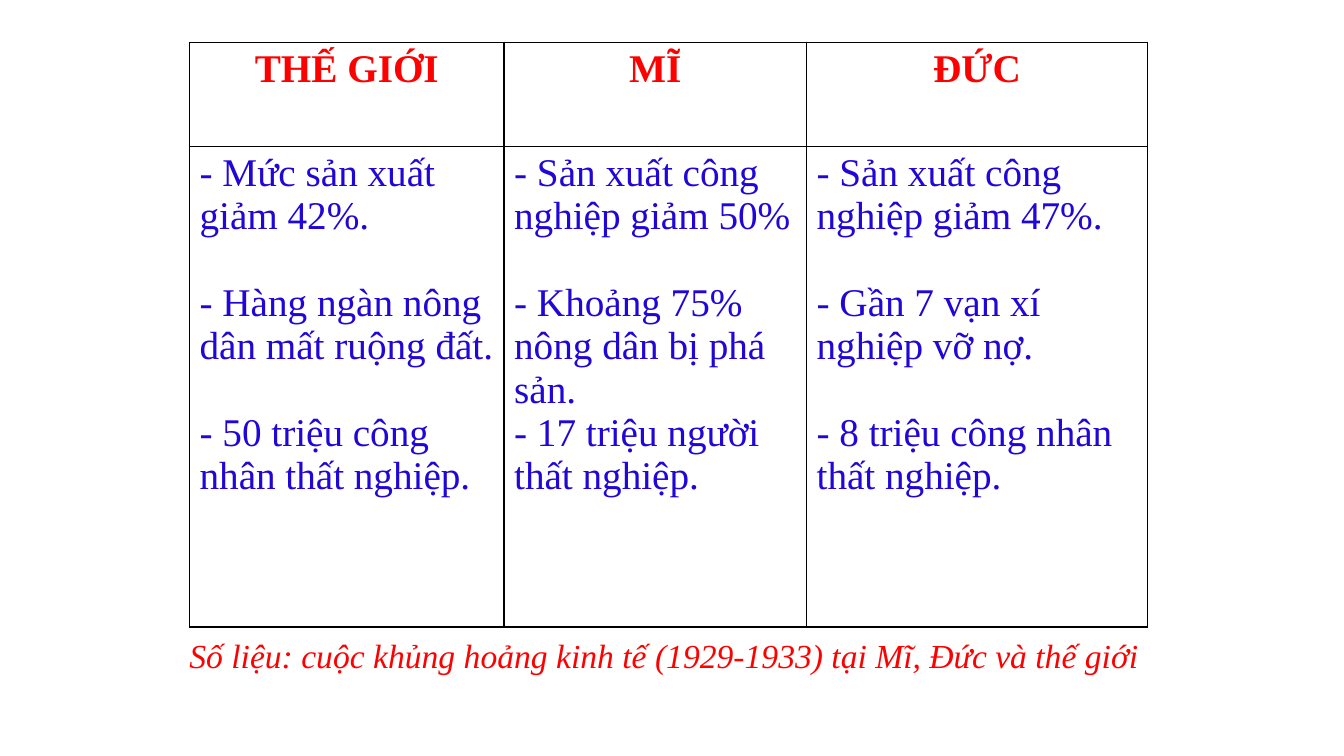
from lxml import etree
from pptx import Presentation
from pptx.dml.color import RGBColor
from pptx.enum import text as t
from pptx.oxml import ns
from pptx.util import Inches, Pt

RED, BLUE, BLACK, WHITE = "FF0000", "2007D7", "000000", "FFFFFF"
GAP = 31
HEADER = {"size": Pt(28), "name": "Times New Roman", "bold": True}
BODY = {**HEADER, "bold": False}
CAPTION = {**BODY, "size": Pt(24), "italic": True}

COLUMNS = [
    ("THẾ GIỚI", 3.12, [
        ("- Mức sản xuất giảm 42%.", 0),
        ("- Hàng ngàn nông dân mất ruộng đất.", GAP),
        ("- 50 triệu công nhân thất nghiệp.", GAP)]),
    ("MĨ", 3, [
        ("- Sản xuất công nghiệp giảm 50%", 0),
        ("- Khoảng 75% nông dân bị phá sản.", GAP),
        ("- 17 triệu người thất nghiệp.", 0)]),
    ("ĐỨC", 3.38, [
        ("- Sản xuất công nghiệp giảm 47%.", 0),
        ("- Gần 7 vạn xí nghiệp vỡ nợ.", GAP),
        ("- 8 triệu công nhân thất nghiệp.", GAP)]),
]
ROW_HEIGHTS = [1.03, 4.77]


def rgb(colour):
    return RGBColor.from_string(colour)


def write(frame, lines, colour, font_format, align=t.PP_ALIGN.LEFT):
    for index, (words, gap) in enumerate(lines):
        paragraph = frame.add_paragraph() if index else frame.paragraphs[0]
        paragraph.alignment = align
        paragraph.space_before = Pt(gap)
        run = paragraph.add_run()
        run.text = words
        for key, value in font_format.items():
            setattr(run.font, key, value)
        run.font.color.rgb = rgb(colour)


def add_borders(cell):
    properties = cell._tc.get_or_add_tcPr()
    for position, side in enumerate(("lnL", "lnR", "lnT", "lnB")):
        line = etree.Element(ns.qn(f"a:{side}"), w=str(Pt(1)))
        fill = etree.SubElement(line, ns.qn("a:solidFill"))
        etree.SubElement(fill, ns.qn("a:srgbClr"), val=BLACK)
        properties.insert(position, line)


def style_cell(cell):
    cell.fill.solid()
    cell.fill.fore_color.rgb = rgb(WHITE)
    add_borders(cell)


def add_figures_table(slide):
    figures = slide.shapes.add_table(
        len(ROW_HEIGHTS), len(COLUMNS),
        Inches(1.88), Inches(0.42), Inches(9.5), Inches(5.8)).table
    for row, height in zip(figures.rows, ROW_HEIGHTS):
        row.height = Inches(height)
    for index, (region, width, facts) in enumerate(COLUMNS):
        figures.columns[index].width = Inches(width)
        heading, body = figures.cell(0, index), figures.cell(1, index)
        write(heading.text_frame, [(region, 0)], RED, HEADER, t.PP_ALIGN.CENTER)
        write(body.text_frame, facts, BLUE, BODY)
        style_cell(heading)
        style_cell(body)


def add_caption(slide, words):
    frame = slide.shapes.add_textbox(
        Inches(1.78), Inches(6.25), Inches(9.72), Inches(0.51)).text_frame
    frame.word_wrap = False
    frame.auto_size = t.MSO_AUTO_SIZE.SHAPE_TO_FIT_TEXT
    write(frame, [(words, 0)], RED, CAPTION)


def main():
    deck = Presentation()
    deck.slide_width, deck.slide_height = Inches(13.33), Inches(7.5)
    slide = deck.slides.add_slide(deck.slide_layouts.get_by_name("Blank"))
    add_figures_table(slide)
    add_caption(slide, "Số liệu: cuộc khủng hoảng kinh tế (1929-1933) tại Mĩ, Đức và thế giới")
    deck.save("out.pptx")


if __name__ == "__main__":
    main()
